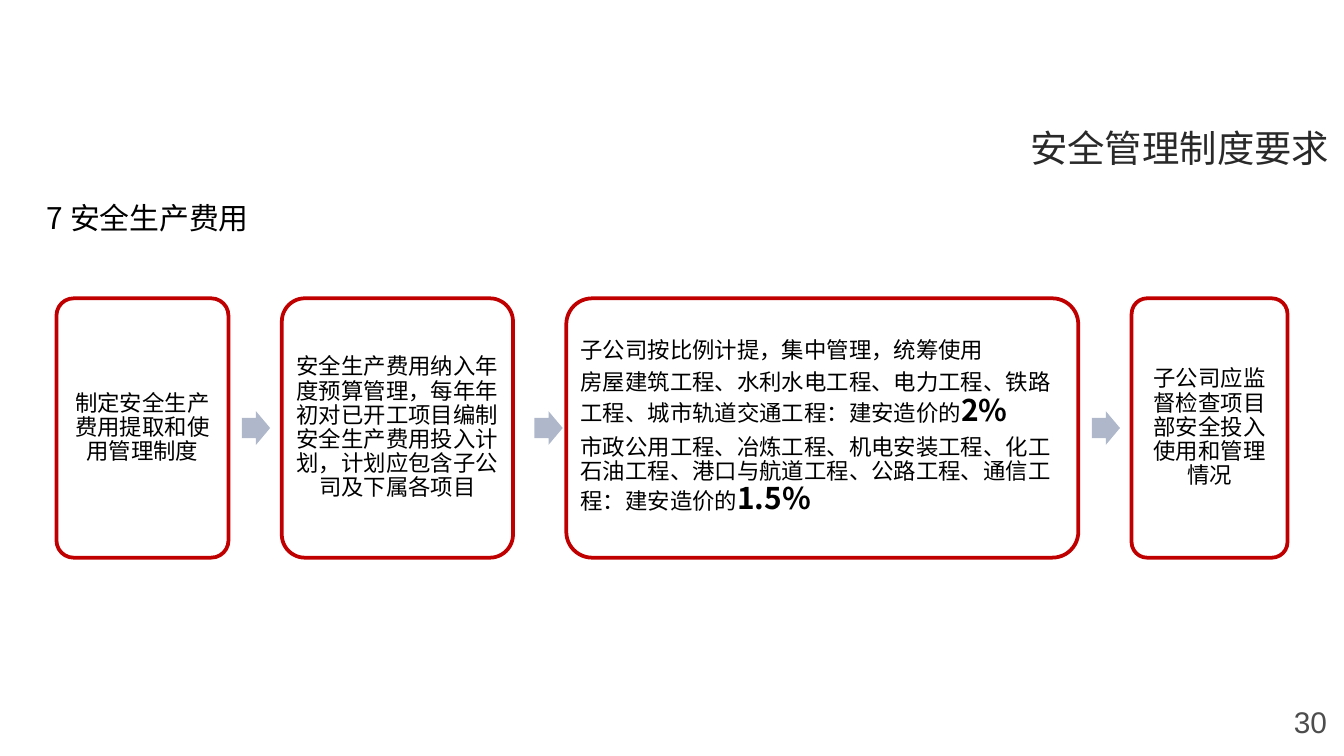
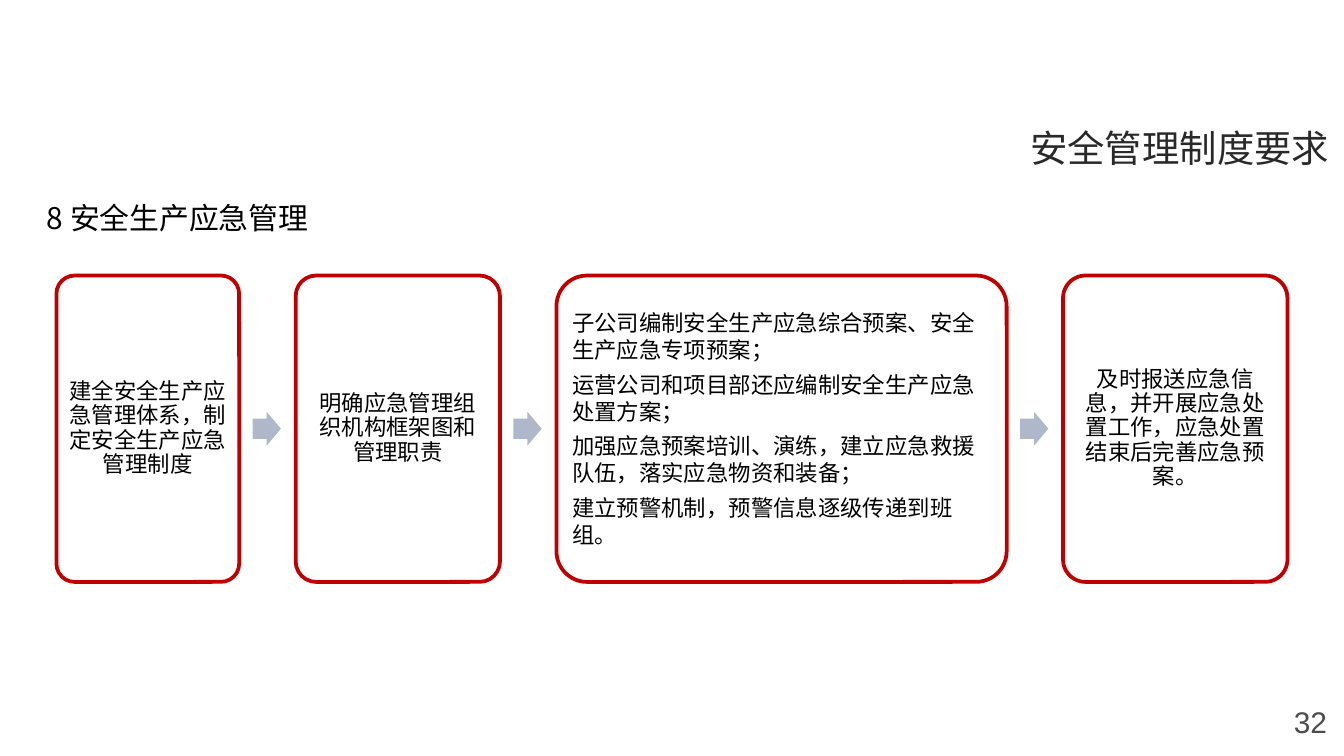
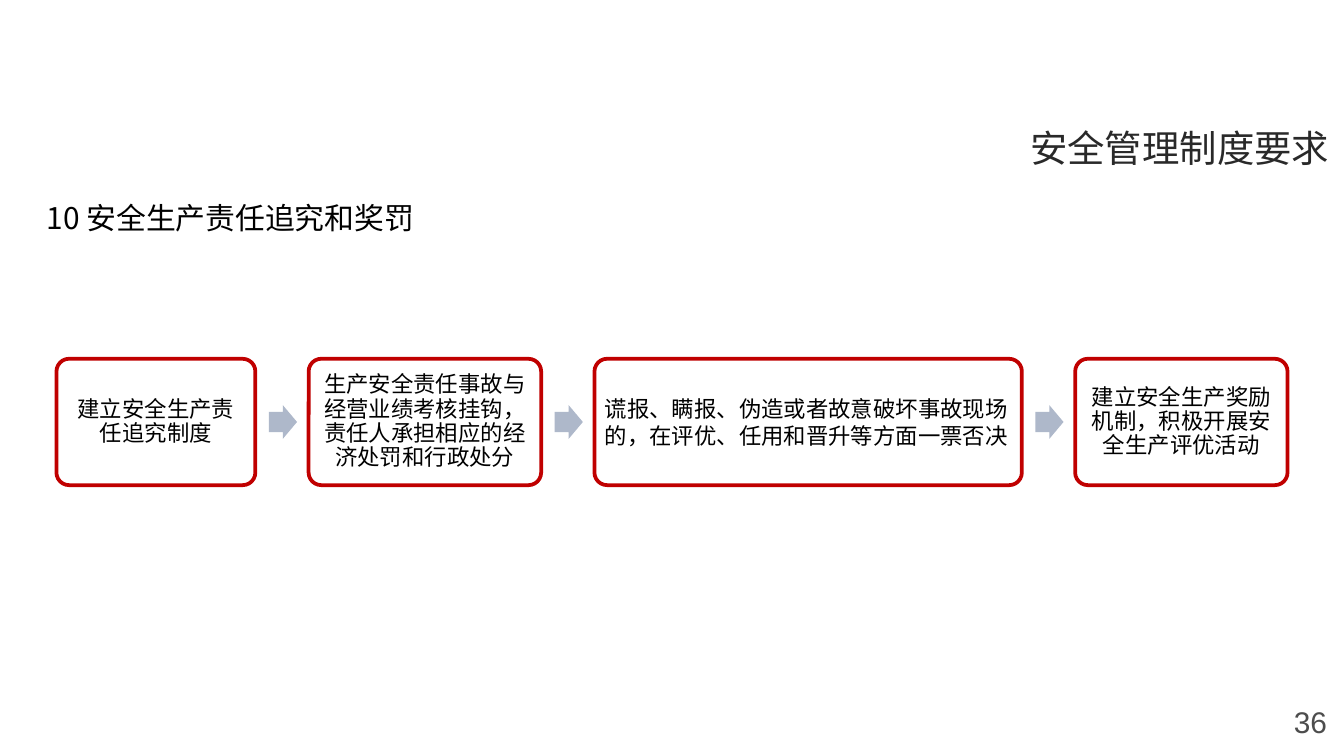
from pptx import Presentation
from pptx.dml.color import RGBColor
from pptx.enum import shapes, text
from pptx.oxml import ns, xmlchemy
from pptx.util import Inches, Pt

RED = RGBColor(0xC0, 0x00, 0x00)
ARROW = RGBColor(0xAE, 0xB8, 0xCA)
BLACK = RGBColor(0x00, 0x00, 0x00)
TITLE_GREY = RGBColor(0x29, 0x29, 0x29)
PAGE_GREY = RGBColor(0x4D, 0x4D, 0x4D)
CJK = "Noto Sans CJK SC"

LEFT, RIGHT = 0.42, 9.58
ARROW_W, ARROW_H, ARROW_GAP = 0.21, 0.25, 0.1
ALIGN = text.PP_ALIGN

SLIDES = [
    dict(page="30", heading="7 安全生产费用", top=2.22, height=1.93,
         detail_spacing=0.9, arrow_gaps=(0.1, 0.16, 0.1), steps=[
             (1.28, ["制定安全生产费用提取和使用管理制度"]),
             (1.72, ["安全生产费用纳入年度预算管理，每年年初对已开工项目编制"
                     "安全生产费用投入计划，计划应包含子公司及下属各项目"]),
             (3.81, ["子公司按比例计提，集中管理，统筹使用",
                     ("房屋建筑工程、水利水电工程、电力工程、铁路工程、"
                      "城市轨道交通工程：建安造价的", "2%"),
                     ("市政公用工程、冶炼工程、机电安装工程、化工石油工程、"
                      "港口与航道工程、公路工程、通信工程：建安造价的", "1.5%")]),
             (1.16, ["子公司应监督检查项目部安全投入使用和管理情况"]),
         ]),
    dict(page="32", heading="8 安全生产应急管理", top=2.05, height=2.28, steps=[
        (1.36, ["建全安全生产应急管理体系，制定安全生产应急管理制度"]),
        (1.52, ["明确应急管理组织机构框架图和管理职责"]),
        (3.35, ["子公司编制安全生产应急综合预案、安全生产应急专项预案；",
                "运营公司和项目部还应编制安全生产应急处置方案；",
                "加强应急预案培训、演练，建立应急救援队伍，落实应急物资和装备；",
                "建立预警机制，预警信息逐级传递到班组。"]),
        (1.67, ["及时报送应急信息，并开展应急处置工作，应急处置结束后完善应急预案。"]),
    ]),
    dict(page="36", heading="10 安全生产责任追究和奖罚", top=2.67, height=0.94, steps=[
        (1.48, ["建立安全生产责任追究制度"]),
        (1.73, ["生产安全责任事故与经营业绩考核挂钩，责任人承担相应的经济处罚和行政处分"]),
        (3.18, ["谎报、瞒报、伪造或者故意破坏事故现场的，在评优、任用和晋升等方面一票否决"]),
        (1.58, ["建立安全生产奖励机制，积极开展安全生产评优活动"]),
    ]),
]


def style_run(r, size, color, font=CJK, bold=False):
    r.font.size, r.font.name, r.font.bold = Pt(size), font, bold
    r.font.color.rgb = color
    ea = xmlchemy.OxmlElement("a:ea")
    ea.set("typeface", font)
    r.font._element.find(ns.qn("a:latin")).addnext(ea)


def add_label(s, box, label, size, color, align=ALIGN.LEFT, font=CJK, wrap=False):
    tf = s.shapes.add_textbox(*map(Inches, box)).text_frame
    tf.text = label
    tf.word_wrap = wrap
    tf.auto_size = text.MSO_AUTO_SIZE.SHAPE_TO_FIT_TEXT
    p = tf.paragraphs[0]
    p.alignment = align
    style_run(p.runs[0], size, color, font)


def add_step(s, box, paragraphs, align, spacing):
    """Red outlined box; a paragraph given as a pair ends in a bold rate."""
    sp = s.shapes.add_shape(shapes.MSO_SHAPE.ROUNDED_RECTANGLE, *map(Inches, box))
    sp.adjustments[0] = 0.1
    sp.shadow.inherit = False
    sp.fill.background()
    sp.line.color.rgb = RED
    sp.line.width = Pt(2)
    tf = sp.text_frame
    tf.word_wrap = True
    tf.vertical_anchor = text.MSO_ANCHOR.MIDDLE
    tf.margin_left = tf.margin_right = tf.margin_top = tf.margin_bottom = Inches(0.05)
    for i, content in enumerate(paragraphs):
        p = tf.add_paragraph() if i else tf.paragraphs[0]
        p.alignment, p.line_spacing, p.space_after = align, spacing, Pt(4.2)
        p._p.get_or_add_pPr().set("hangingPunct", "0")
        body, *rate = [content] if isinstance(content, str) else content
        p.text = body
        style_run(p.runs[0], 12, BLACK)
        for value in rate:
            r = p.add_run()
            r.text = value
            style_run(r, 16, BLACK, bold=True)


def add_arrow(s, left, middle):
    sp = s.shapes.add_shape(shapes.MSO_SHAPE.RIGHT_ARROW, Inches(left),
                            Inches(middle - ARROW_H / 2), Inches(ARROW_W), Inches(ARROW_H))
    sp.adjustments[0], sp.adjustments[1] = 0.6, 0.5
    sp.shadow.inherit = False
    sp.fill.solid()
    sp.fill.fore_color.rgb = ARROW
    sp.line.fill.background()


def add_flow(s, top, height, steps, detail_spacing=1.0, arrow_gaps=(ARROW_GAP,) * 3):
    """Row of boxes with equal gaps; the widest holds left-aligned details."""
    widths = [width for width, _ in steps]
    gap = (RIGHT - LEFT - sum(widths)) / (len(steps) - 1)
    left = LEFT
    for i, (width, paragraphs) in enumerate(steps):
        detail = width == max(widths)
        add_step(s, (left, top, width, height), paragraphs,
                 ALIGN.LEFT if detail else ALIGN.CENTER,
                 detail_spacing if detail else 0.9)
        if i < len(arrow_gaps):
            add_arrow(s, left + width + arrow_gaps[i], top + height / 2)
        left += width + gap


def add_process_slide(prs, page, heading, **flow):
    s = prs.slides.add_slide(prs.slide_layouts[6])
    add_label(s, (9.51, 5.19, 0.48, 0.37), page, 16, PAGE_GREY, ALIGN.CENTER, "Arial")
    add_label(s, (7.54, 0.88, 2.45, 0.44), "安全管理制度要求", 20, TITLE_GREY, ALIGN.RIGHT)
    add_label(s, (0.25, 1.44, 3, 0.37), heading, 16, BLACK, wrap=True)
    add_flow(s, **flow)


def main():
    prs = Presentation()
    prs.slide_width = Inches(10)
    prs.slide_height = prs.slide_width * 9 // 16
    for content in SLIDES:
        add_process_slide(prs, **content)
    prs.save("out.pptx")


if __name__ == "__main__":
    main()
